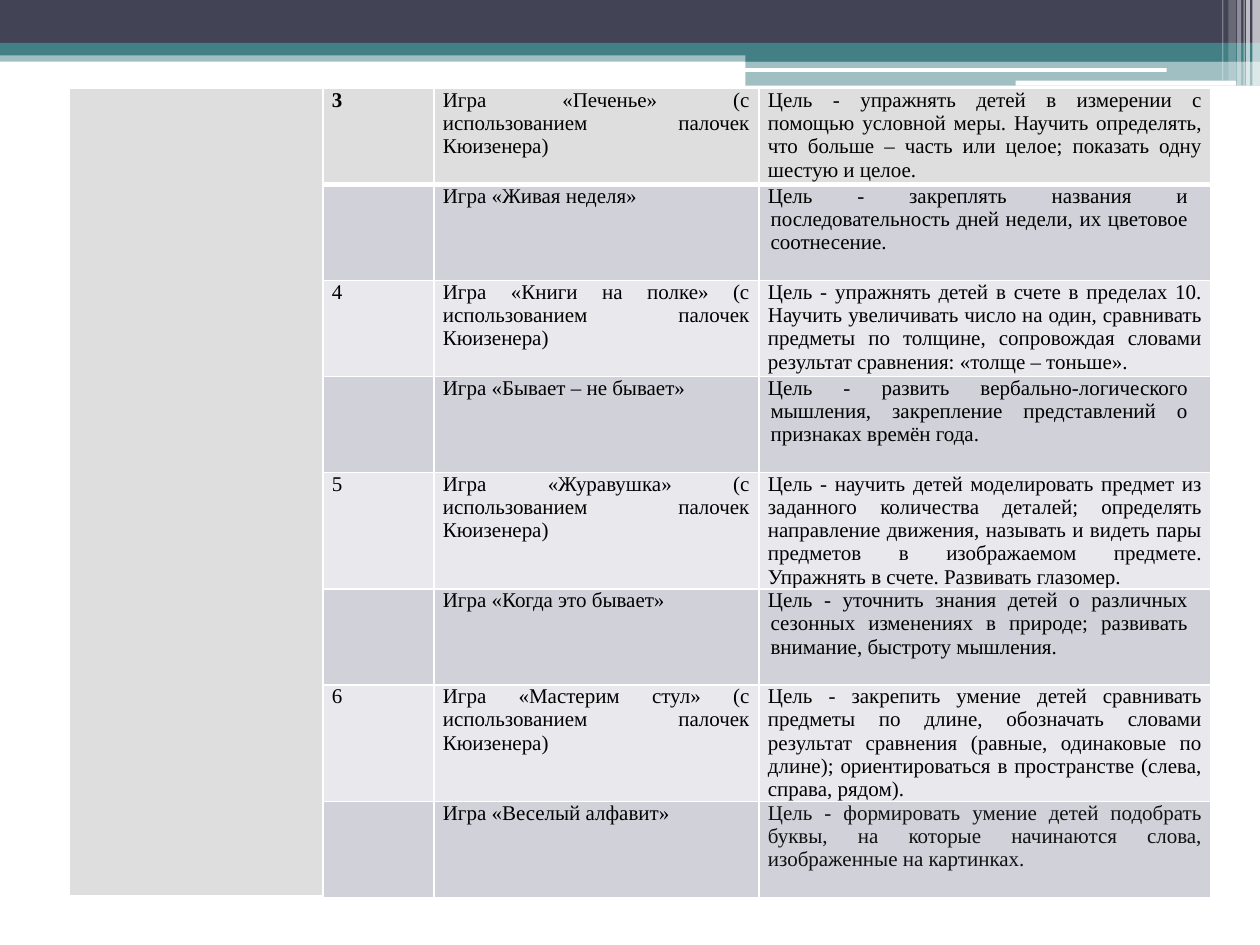
from lxml import etree
from pptx import Presentation
from pptx.dml.color import RGBColor
from pptx.enum.shapes import MSO_SHAPE
from pptx.enum.text import PP_ALIGN
from pptx.oxml.ns import qn
from pptx.util import Pt

RECTANGLE = MSO_SHAPE.RECTANGLE
ROUNDED = MSO_SHAPE.ROUNDED_RECTANGLE
JUSTIFY = PP_ALIGN.JUSTIFY

FONT = "Times New Roman"
NAVY, TEAL, WHITE = "424456", "438086", "FFFFFF"
HEADER_FILL, DARK_FILL, LIGHT_FILL = "DEDEDE", "D1D1DA", "E9E9ED"

# Left, top, width, height, colour, opacity in percent
BANDS = [
    (0, 28.8, 720, 6.5, TEAL, 50),
    (0, 0, 720, 24.5, NAVY, 100),
    (0, 24.5, 720, 7.2, TEAL, 100),
    (426, 28.1, 294, 7.2, TEAL, 100),
    (426, 34.6, 294, 14.4, TEAL, 50),
]
PILLS = [(425.5, 38.9, 241.2, 2.2), (580.3, 46.1, 126, 2.9)]
# Left, width, height, opacity in percent
STRIPES = [
    (715.7, 4.3, 49, 65),
    (712.1, 2.2, 49, 65),
    (710.6, 0.7, 49, 60),
    (707, 2.2, 49, 40),
    (702, 4.3, 46.1, 20),
    (698.4, 0.7, 46.1, 30),
]

COLUMN_WIDTHS = [144.7, 63.4, 185.8, 258.5]
ROW_HEIGHT = 54.85
STICKS = "(с использованием палочек Кюизенера)"
INDENTED = {"left": 1.5, "first": -1.5, "right": 8}

# Number, game, goal, format of the goal
GAMES = [
    ("3", f"Игра «Печенье» {STICKS}",
     "Цель - упражнять детей в измерении с помощью условной меры. Научить "
     "определять, что больше – часть или целое; показать одну шестую и целое.", {}),
    ("", "Игра «Живая неделя»",
     "Цель - закреплять названия и последовательность дней недели, "
     "их цветовое соотнесение.", INDENTED),
    ("4", f"Игра «Книги на полке» {STICKS}",
     "Цель - упражнять детей в счете в пределах 10. Научить увеличивать число "
     "на один, сравнивать предметы по толщине, сопровождая словами результат "
     "сравнения: «толще – тоньше».", {}),
    ("", "Игра «Бывает – не бывает»",
     "Цель - развить вербально-логического мышления, закрепление представлений "
     "о признаках времён года.", INDENTED),
    ("5", f"Игра «Журавушка» {STICKS}",
     "Цель - научить детей моделировать предмет из заданного количества деталей; "
     "определять направление движения, называть и видеть пары предметов в "
     "изображаемом предмете. Упражнять в счете. Развивать глазомер.", {}),
    ("", "Игра «Когда это бывает»",
     "Цель - уточнить знания детей о различных сезонных изменениях в природе; "
     "развивать внимание, быстроту мышления.", INDENTED),
    ("6", f"Игра «Мастерим стул» {STICKS}",
     "Цель - закрепить умение детей сравнивать предметы по длине, обозначать "
     "словами результат сравнения (равные, одинаковые по длине); "
     "ориентироваться в пространстве (слева, справа, рядом).", {}),
    ("", "Игра «Веселый алфавит»",
     "Цель - формировать умение детей подобрать буквы, на которые начинаются "
     "слова, изображенные на картинках.", {"color": "111111"}),
]


def paint(fill, color):
    fill.solid()
    fill.fore_color.rgb = RGBColor.from_string(color)


def add_block(slide, left, top, width, height, color, opacity=100, kind=RECTANGLE):
    shape = slide.shapes.add_shape(kind, Pt(left), Pt(top), Pt(width), Pt(height))
    shape.shadow.inherit = False
    shape.line.fill.background()
    paint(shape.fill, color)
    if opacity < 100:
        color_element = shape.fill._xPr.find(f".//{qn('a:srgbClr')}")
        etree.SubElement(color_element, qn("a:alpha"), val=str(opacity * 1000))


def write_text(cell, text, color="000000", bold=False, left=0, first=0, right=0):
    paragraph = cell.text_frame.paragraphs[0]
    paragraph.alignment = JUSTIFY
    properties = paragraph._p.get_or_add_pPr()
    for name, value in (("marL", left), ("marR", right), ("indent", first)):
        properties.set(name, str(Pt(value)))
    run = paragraph.add_run()
    run.text = text
    run.font.name = FONT
    run.font.size = Pt(12)
    run.font.bold = bold
    run.font.color.rgb = RGBColor.from_string(color)


def format_cell(cell, color, bottom_width):
    cell.margin_left = cell.margin_right = Pt(5.2)
    cell.margin_top = cell.margin_bottom = 0
    properties = cell._tc.get_or_add_tcPr()
    for side, width in (("L", 1), ("R", 1), ("T", 1), ("B", bottom_width)):
        line = etree.SubElement(properties, qn(f"a:ln{side}"), w=str(Pt(width)))
        line_fill = etree.SubElement(line, qn("a:solidFill"))
        etree.SubElement(line_fill, qn("a:srgbClr"), val=WHITE)
    paint(cell.fill, color)


def add_games_table(slide):
    frame = slide.shapes.add_table(
        len(GAMES), len(COLUMN_WIDTHS), Pt(39.8), Pt(50.6),
        Pt(sum(COLUMN_WIDTHS)), Pt(ROW_HEIGHT * len(GAMES)))
    table = frame.table
    for column, width in zip(table.columns, COLUMN_WIDTHS):
        column.width = Pt(width)

    for index, (number, game, goal, goal_format) in enumerate(GAMES):
        table.rows[index].height = Pt(ROW_HEIGHT)
        is_header = index == 0
        color = HEADER_FILL if is_header else (LIGHT_FILL, DARK_FILL)[index % 2]
        for column in range(len(COLUMN_WIDTHS)):
            format_cell(table.cell(index, column),
                        HEADER_FILL if column == 0 else color,
                        3 if is_header else 1)
        if number:
            write_text(table.cell(index, 1), number, bold=is_header)
        write_text(table.cell(index, 2), game)
        write_text(table.cell(index, 3), goal, **goal_format)

    # The first column is one tall empty cell
    table.cell(0, 0).merge(table.cell(len(GAMES) - 1, 0))


def main():
    presentation = Presentation()
    presentation.slide_width, presentation.slide_height = Pt(720), Pt(540)
    slide = presentation.slides.add_slide(presentation.slide_layouts[6])

    # Header decoration
    for band in BANDS:
        add_block(slide, *band)
    for pill in PILLS:
        add_block(slide, *pill, WHITE, kind=ROUNDED)
    for left, width, height, opacity in STRIPES:
        add_block(slide, left, 0, width, height, WHITE, opacity)

    # Games and their goals
    add_games_table(slide)
    presentation.save("out.pptx")


if __name__ == "__main__":
    main()
